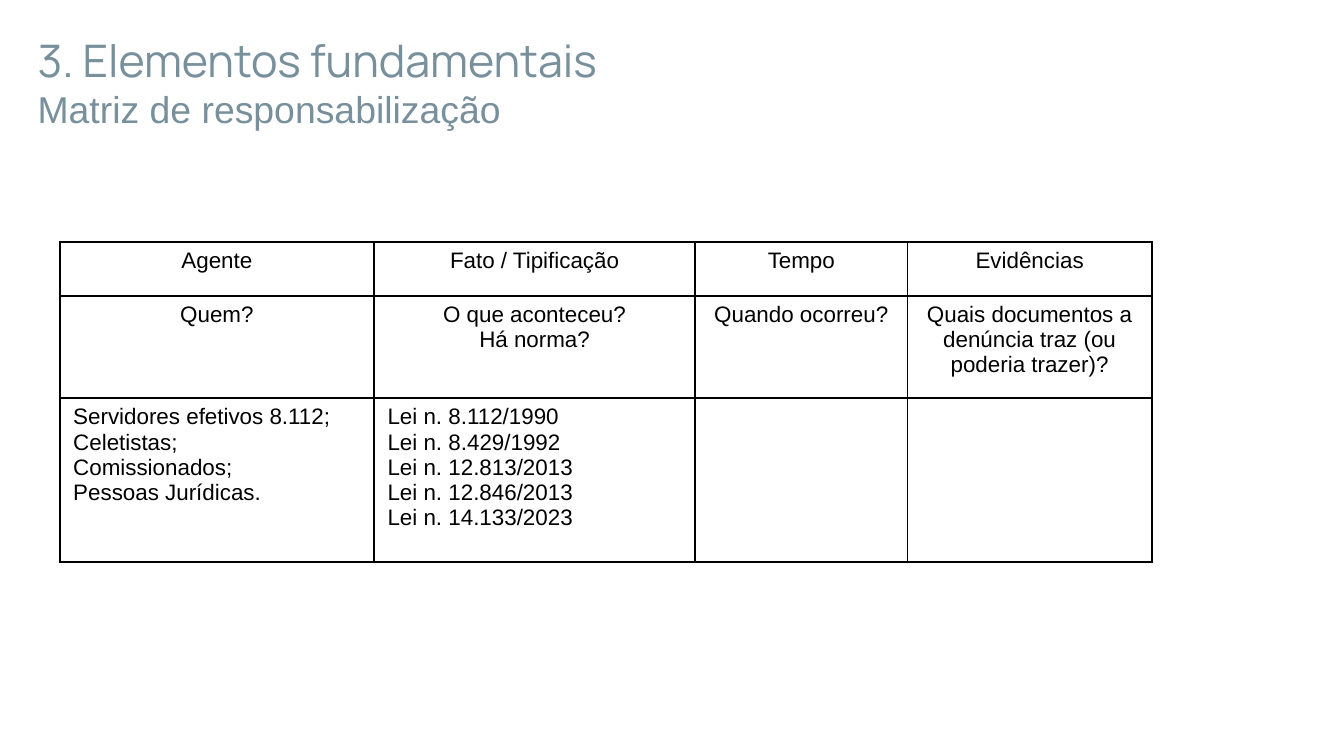
from lxml.etree import SubElement
from pptx import Presentation
from pptx.dml.color import RGBColor
from pptx.enum.text import MSO_ANCHOR, MSO_AUTO_SIZE, PP_ALIGN
from pptx.oxml.ns import qn
from pptx.util import Cm, Pt

COLORS = {"heading": "78909C", "ink": "000000"}
COLUMN_WIDTHS = [5.94, 6.07, 4.01, 4.62]
ROW_HEIGHTS = [1.02, 1.93, 3.1]
MATRIX = [
    ["Agente", "Fato / Tipificação", "Tempo", "Evidências"],
    ["Quem?", "O que aconteceu?\nHá norma?", "Quando ocorreu?",
     "Quais documentos a denúncia traz (ou poderia trazer)?"],
    ["Servidores efetivos 8.112;\nCeletistas;\nComissionados;\nPessoas Jurídicas.",
     "Lei n. 8.112/1990\nLei n. 8.429/1992\nLei n. 12.813/2013\n"
     "Lei n. 12.846/2013\nLei n. 14.133/2023", "", ""],
]


def style_font(font, name, size, color):
    font.name = name
    font.size = Pt(size)
    font.color.rgb = RGBColor.from_string(COLORS[color])


def add_heading(slide):
    heading = slide.shapes.title
    heading.left, heading.top = Cm(0.46), Cm(0.36)
    heading.width, heading.height = Cm(20.93), Cm(2.41)
    frame = heading.text_frame
    frame.margin_left = frame.margin_right = Cm(0.25)
    frame.margin_top = frame.margin_bottom = Cm(0.25)
    frame.vertical_anchor = MSO_ANCHOR.TOP
    frame.word_wrap = True
    frame.auto_size = MSO_AUTO_SIZE.NONE
    lines = frame.paragraphs[0]
    lines.text = "3. Elementos fundamentais\vMatriz de responsabilização"
    lines.alignment = PP_ALIGN.LEFT
    section, topic = lines.runs
    style_font(section.font, "Manrope", 24, "heading")
    style_font(topic.font, "Arial", 20, "heading")


def set_borders(cell):
    properties = cell._tc.get_or_add_tcPr()
    for side in ("a:lnL", "a:lnR", "a:lnT", "a:lnB"):
        border = SubElement(properties, qn(side), w=str(Pt(1)))
        fill = SubElement(border, qn("a:solidFill"))
        SubElement(fill, qn("a:srgbClr"), val=COLORS["ink"])


def fill_cell(cell, text, alignment):
    set_borders(cell)
    cell.fill.background()
    cell.text_frame.text = text
    for paragraph in cell.text_frame.paragraphs:
        paragraph.alignment = alignment
        style_font(paragraph.font, "Arial", 12, "ink")
        for run in paragraph.runs:
            style_font(run.font, "Arial", 12, "ink")


def add_matrix(slide):
    matrix = slide.shapes.add_table(
        len(ROW_HEIGHTS), len(COLUMN_WIDTHS), Cm(1.13), Cm(4.57),
        Cm(sum(COLUMN_WIDTHS)), Cm(sum(ROW_HEIGHTS))).table
    matrix.first_row = False
    matrix.horz_banding = False
    for column, width in zip(matrix.columns, COLUMN_WIDTHS):
        column.width = Cm(width)
    for row, height in zip(matrix.rows, ROW_HEIGHTS):
        row.height = Cm(height)
    for row_index, texts in enumerate(MATRIX):
        alignment = PP_ALIGN.CENTER if row_index < 2 else PP_ALIGN.LEFT
        for column_index, text in enumerate(texts):
            fill_cell(matrix.cell(row_index, column_index), text, alignment)


def main():
    deck = Presentation()
    deck.slide_width, deck.slide_height = Cm(25.4), Cm(14.29)
    slide = deck.slides.add_slide(deck.slide_layouts[5])
    add_heading(slide)
    add_matrix(slide)
    deck.save("out.pptx")


if __name__ == "__main__":
    main()
